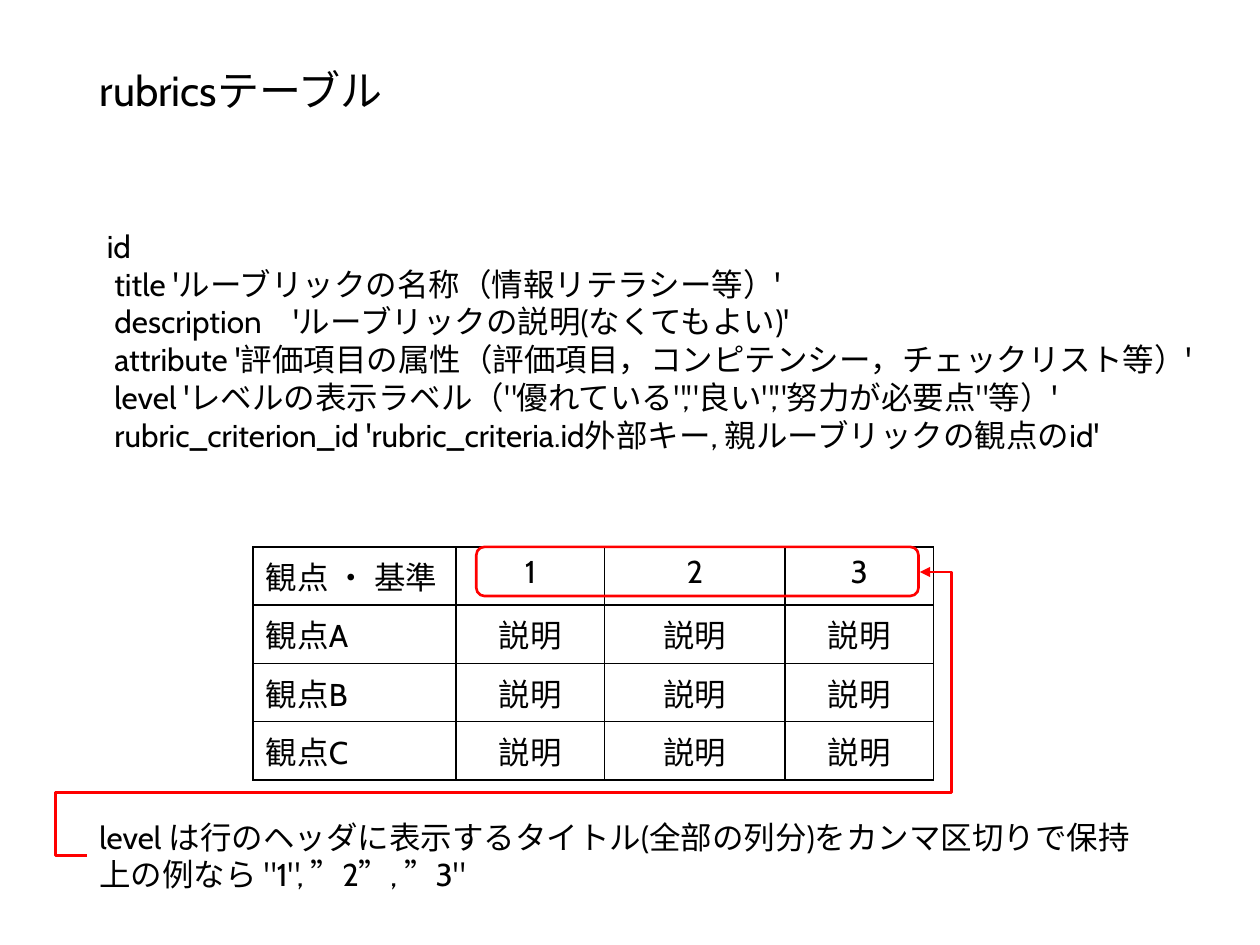
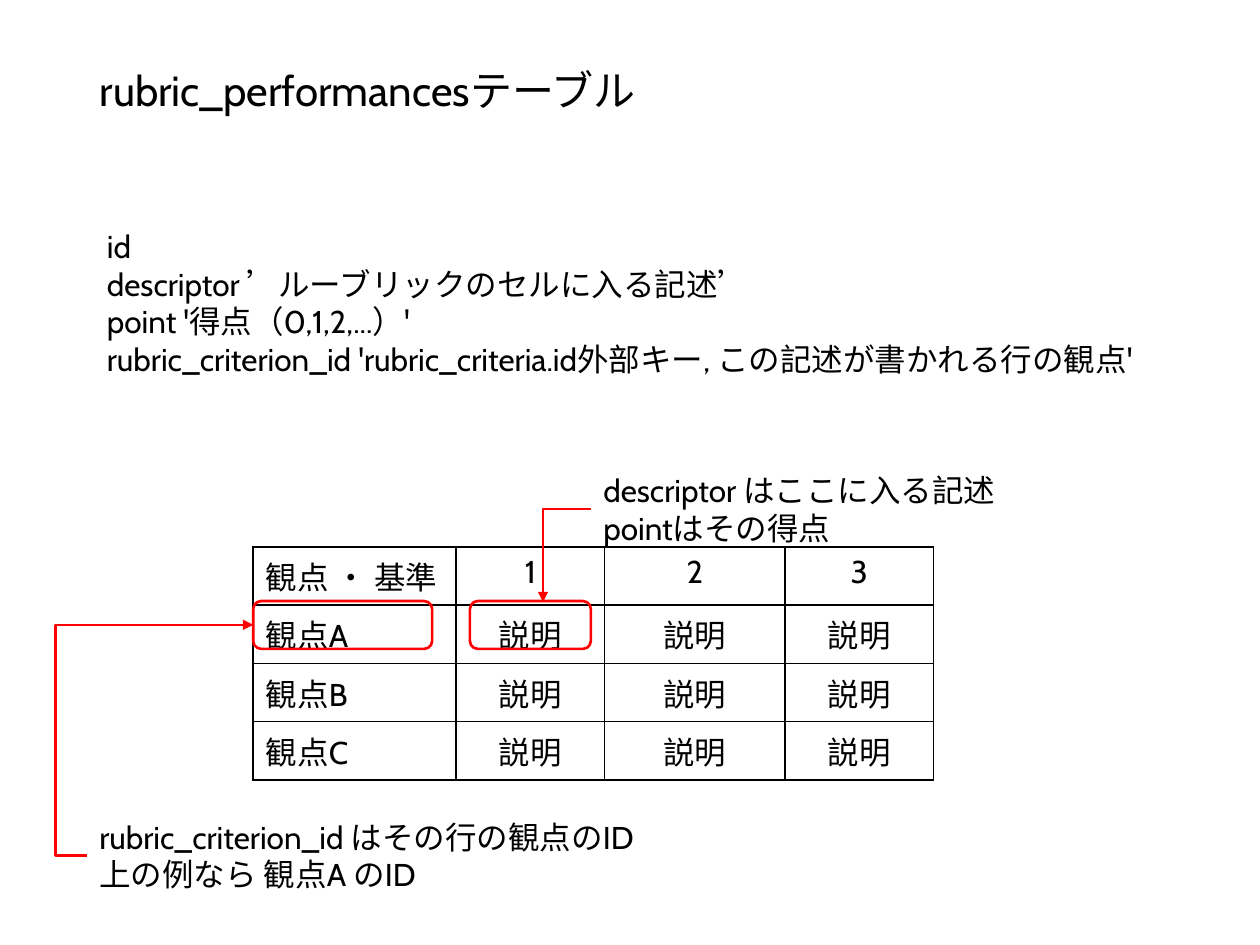
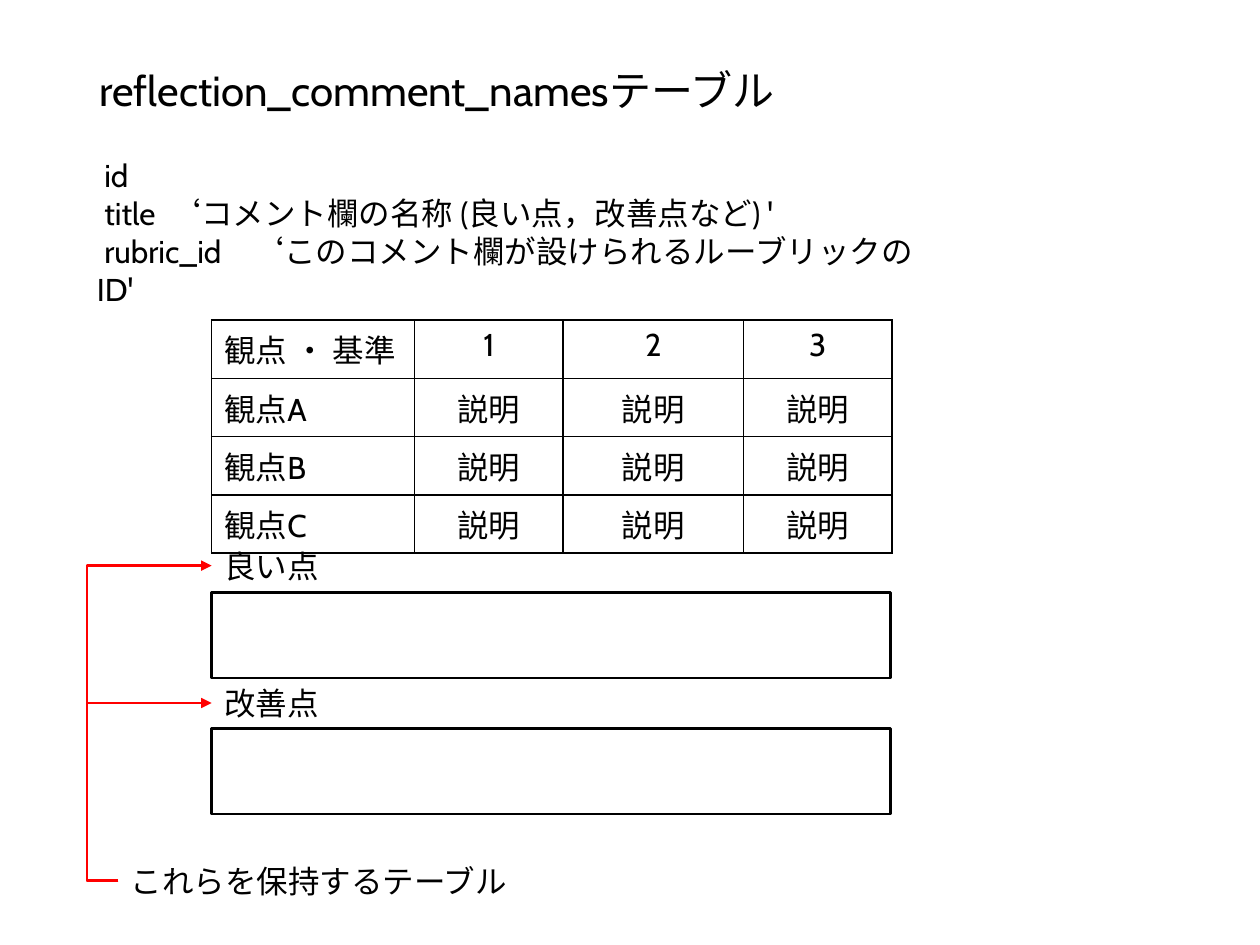
from lxml.etree import SubElement
from pptx import Presentation
from pptx.dml.color import RGBColor
from pptx.enum.shapes import MSO_CONNECTOR as CONNECTOR, MSO_SHAPE as SHAPE
from pptx.enum.text import MSO_ANCHOR as ANCHOR, MSO_AUTO_SIZE as AUTO_SIZE, PP_ALIGN as ALIGN
from pptx.oxml import parse_xml
from pptx.oxml.ns import nsdecls, qn
from pptx.util import Pt

PX = 9144  # 100 px to the inch
BLACK = RGBColor(0x00, 0x00, 0x00)
WHITE = RGBColor(0xFF, 0xFF, 0xFF)
RED = RGBColor(0xFF, 0x00, 0x00)
FONT = "Cabin"
LINE_WIDTH = Pt(1.5)
TITLE_BOX = (69, 40, 862, 68)

# The rubric table, the same on every slide
COLUMN_WIDTHS = (161, 118, 143, 118)
ROW_HEIGHT = 41
RUBRIC = [["観点 ・ 基準", "1", "2", "3"]]
RUBRIC += [[f"観点{letter}"] + ["説明"] * 3 for letter in "ABC"]

# Texts: box, lines, first-line indents
# Frames: preset, box, line colour, fill colour
# Arrows: start, end, positions of the turns (x, y, x in turn)
SLIDES = [
    {
        "title": "rubricsテーブル",
        "table": (201, 434),
        "texts": [
            ((69, 175, 897, 192), [
                "id",
                "title 'ルーブリックの名称（情報リテラシー等）'",
                "description　'ルーブリックの説明(なくてもよい)'",
                "attribute '評価項目の属性（評価項目，コンピテンシー，チェックリスト等）'",
                "level 'レベルの表示ラベル（\"優れている\",\"良い\",\"努力が必要点\"等）'",
                "rubric_criterion_id 'rubric_criteria.id外部キー, 親ルーブリックの観点のid'",
            ], [6] + [12] * 5),
            ((69, 644, 848, 71), [
                "level は行のヘッダに表示するタイトル(全部の列分)をカンマ区切りで保持",
                "上の例なら \"1\", ”2”, ”3\"",
            ], [0, 0]),
        ],
        "frames": [(SHAPE.ROUNDED_RECTANGLE, (378, 434, 351, 39), RED, None)],
        "arrows": [((69, 679), (730, 454), (44, 629, 755))],
    },
    {
        "title": "rubric_performancesテーブル",
        "table": (201, 434),
        "texts": [
            ((69, 175, 861, 131), [
                "id",
                "descriptor ’ルーブリックのセルに入る記述’",
                "point '得点（0,1,2,...）'",
                "rubric_criterion_id 'rubric_criteria.id外部キー, この記述が書かれる行の観点'",
            ], [6] * 4),
            ((69, 644, 450, 71), [
                "rubric_criterion_id はその行の観点のID",
                "上の例なら 観点A のID",
            ], [0, 0]),
            ((469, 369, 339, 71), [
                "descriptor はここに入る記述",
                "pointはその得点",
            ], [0, 0]),
        ],
        "frames": [
            (SHAPE.ROUNDED_RECTANGLE, (201, 477, 142, 38), RED, None),
            (SHAPE.ROUNDED_RECTANGLE, (373, 477, 96, 38), RED, None),
        ],
        "arrows": [
            ((69, 679), (201, 496), (44,)),
            ((469, 404), (431, 478), ()),
        ],
    },
    {
        "title": "reflection_comment_namesテーブル",
        "table": (168, 254),
        "texts": [
            ((67, 119, 687, 101), [
                "id",
                "title  ‘コメント欄の名称 (良い点，改善点など) '",
                "rubric_id　‘このコメント欄が設けられるルーブリックのID'",
            ], [6] * 3),
            ((168, 429, 96, 40), ["良い点"], [0]),
            ((168, 538, 96, 40), ["改善点"], [0]),
            ((94, 679, 449, 40), ["これらを保持するテーブル"], [0]),
        ],
        "frames": [
            (SHAPE.RECTANGLE, (168, top, 539, 68), BLACK, WHITE) for top in (470, 578)
        ],
        "arrows": [((94, 699), (168, end_y), (69,)) for end_y in (449, 558)],
    },
]


def write_text(frame, lines, size=18, align=ALIGN.LEFT, indents=None, spacing=None):
    """Fill a text frame with one paragraph a line."""
    for index, line in enumerate(lines):
        paragraph = frame.paragraphs[0] if index == 0 else frame.add_paragraph()
        paragraph.alignment = align
        if spacing:
            paragraph.line_spacing = spacing
        if indents and indents[index]:
            properties = paragraph._p.get_or_add_pPr()
            properties.set("marL", "0")
            properties.set("indent", str(indents[index] * PX))
        run = paragraph.add_run()
        run.text = line
        run.font.name = FONT
        run.font.size = Pt(size)
        run.font.color.rgb = BLACK


def add_arrow(slide, start, end, turns):
    """Draw a red bent arrow that turns at the given positions."""
    connector = slide.shapes.add_connector(
        CONNECTOR.ELBOW, *(value * PX for value in start + end))
    connector.line.color.rgb = RED
    connector.line.width = LINE_WIDTH
    SubElement(connector.line._get_or_add_ln(), qn("a:tailEnd"), type="triangle")
    SubElement(connector._element.spPr, qn("a:effectLst"))
    geometry = connector._element.spPr.find(qn("a:prstGeom"))
    geometry.set("prst", f"bentConnector{len(turns) + 2}")
    guides = geometry.find(qn("a:avLst"))
    for number, turn in enumerate(turns):
        axis = number % 2
        share = (turn - start[axis]) / (end[axis] - start[axis])
        name = "adj" if len(turns) == 1 else f"adj{number + 1}"
        if len(turns) == 1:
            name = "adj1"
        SubElement(guides, qn("a:gd"), name=name, fmla=f"val {round(share * 100000)}")


presentation = Presentation()
presentation.slide_width = 1000 * PX
presentation.slide_height = 750 * PX
title_only = presentation.slide_layouts[5]

for content in SLIDES:
    slide = presentation.slides.add_slide(title_only)

    # Title
    title = slide.shapes.title
    title.left, title.top, title.width, title.height = (value * PX for value in TITLE_BOX)
    title.text_frame.auto_size = AUTO_SIZE.NONE
    title.text_frame.vertical_anchor = ANCHOR.MIDDLE
    write_text(title.text_frame, [content["title"]], size=24, spacing=0.9)

    # Rubric table
    left, top = content["table"]
    table = slide.shapes.add_table(
        len(RUBRIC), len(COLUMN_WIDTHS), left * PX, top * PX,
        sum(COLUMN_WIDTHS) * PX, ROW_HEIGHT * len(RUBRIC) * PX).table
    table.first_row = table.horz_banding = False
    for column, width in zip(table.columns, COLUMN_WIDTHS):
        column.width = width * PX
    for row, values in zip(table.rows, RUBRIC):
        row.height = ROW_HEIGHT * PX
        for index, (cell, value) in enumerate(zip(row.cells, values)):
            write_text(cell.text_frame, [value],
                       align=ALIGN.CENTER if index else ALIGN.LEFT)
            cell_properties = cell._tc.get_or_add_tcPr()
            for side in ("lnL", "lnR", "lnT", "lnB"):
                cell_properties.append(parse_xml(
                    f'<a:{side} {nsdecls("a")} w="{Pt(1)}"><a:solidFill>'
                    f'<a:srgbClr val="{BLACK}"/></a:solidFill></a:{side}>'))
            cell.fill.background()

    # Outlined frames
    for preset, box, line_color, fill_color in content["frames"]:
        shape = slide.shapes.add_shape(preset, *(value * PX for value in box))
        shape.shadow.inherit = False
        shape.line.color.rgb = line_color
        shape.line.width = LINE_WIDTH
        if fill_color is None:
            shape.fill.background()
        else:
            shape.fill.solid()
            shape.fill.fore_color.rgb = fill_color

    # Field lists and notes
    for box, lines, indents in content["texts"]:
        text_box = slide.shapes.add_textbox(*(value * PX for value in box))
        text_box.text_frame.word_wrap = True
        write_text(text_box.text_frame, lines, indents=indents)

    # Arrows from the notes to the table
    for start, end, turns in content["arrows"]:
        add_arrow(slide, start, end, turns)

presentation.save("out.pptx")
